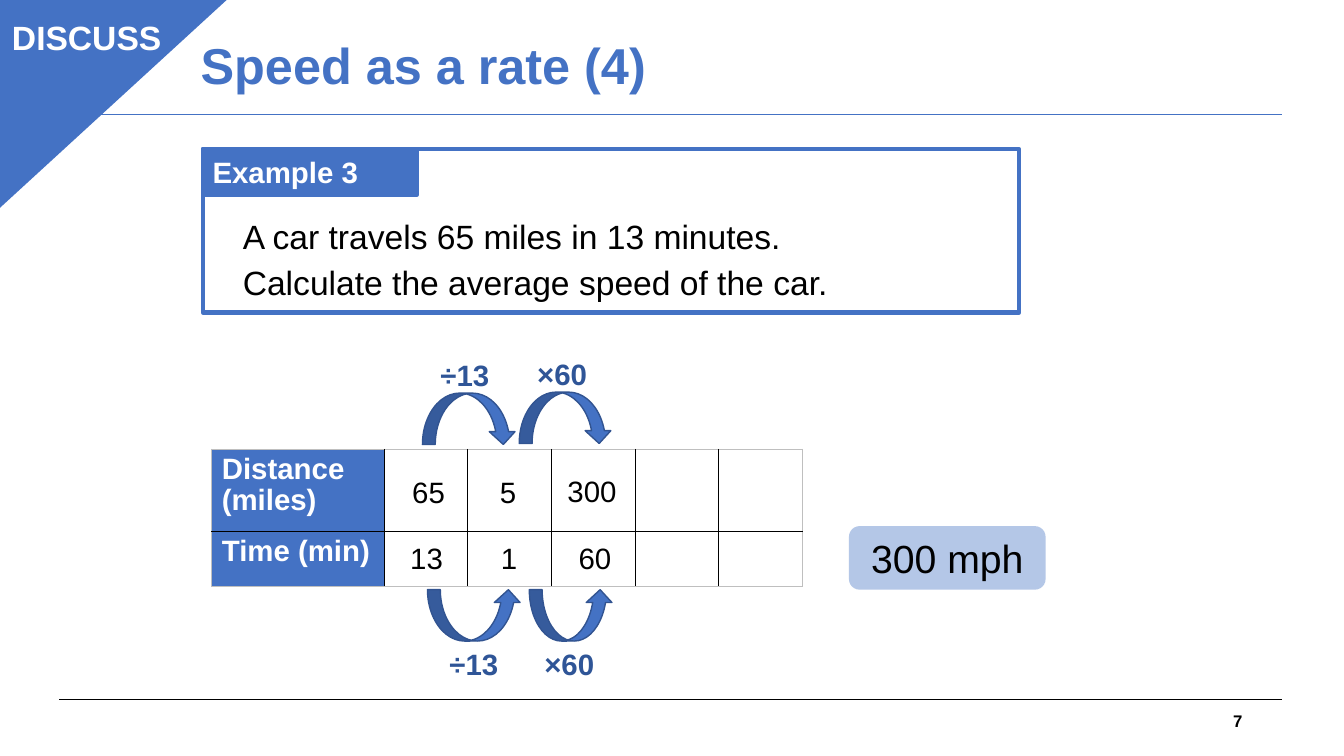
"""Builds the slide "Speed as a rate (4)" with a ratio table and scaling arrows."""
from lxml.etree import SubElement
from pptx import Presentation
from pptx.dml.color import RGBColor
from pptx.enum.shapes import MSO_CONNECTOR, MSO_SHAPE
from pptx.enum.text import MSO_ANCHOR, PP_ALIGN
from pptx.oxml.ns import qn
from pptx.util import Inches, Pt

BLUE, DARK_BLUE, OUTLINE, PALE_BLUE = "4472C4", "2F5597", "325491", "B4C7E7"
BLACK, WHITE, GREY = "000000", "FFFFFF", "BFBFBF"


def write(shape, lines, size, color, bold=False, align=PP_ALIGN.LEFT,
          anchor=MSO_ANCHOR.TOP, after=0, spacing=1.0):
    """Fill a shape or table cell with formatted paragraphs."""
    frame = shape.text_frame
    frame.word_wrap = True
    frame.vertical_anchor = anchor
    for index, line in enumerate(lines):
        paragraph = frame.add_paragraph() if index else frame.paragraphs[0]
        paragraph.alignment = align
        paragraph.space_before = Pt(0)
        paragraph.space_after = Pt(after)
        paragraph.line_spacing = spacing
        run = paragraph.add_run()
        run.text = line
        run.font.name = "Arial"
        run.font.size = Pt(size)
        run.font.bold = bold
        run.font.color.rgb = RGBColor.from_string(color)


def add_box(kind, place, fill=None, line=None, width=1, flip=False):
    """Add a preset shape with the given fill and outline."""
    shape = slide.shapes.add_shape(kind, *[Inches(value) for value in place])
    shape.shadow.inherit = False
    if fill:
        shape.fill.solid()
        shape.fill.fore_color.rgb = RGBColor.from_string(fill)
    else:
        shape.fill.background()
    if line:
        shape.line.color.rgb = RGBColor.from_string(line)
        shape.line.width = Pt(width)
    else:
        shape.line.fill.background()
    if flip:
        shape.element.spPr.get_or_add_xfrm().set("flipV", "1")
    return shape


presentation = Presentation()
presentation.slide_width = Inches(13.33)
presentation.slide_height = Inches(7.5)
slide = presentation.slides.add_slide(presentation.slide_layouts[5])

for height, color in [(6.94, BLACK), (1.14, BLUE)]:
    rule = slide.shapes.add_connector(
        MSO_CONNECTOR.STRAIGHT, Inches(0.59), Inches(height), Inches(12.72), Inches(height))
    rule.line.color.rgb = RGBColor.from_string(color)
    rule.line.width = Pt(0.75)
    SubElement(rule.element.spPr, qn("a:effectLst"))

title = slide.shapes.title
title.left, title.top = Inches(1.89), Inches(0.12)
title.width, title.height = Inches(8.61), Inches(1.11)
write(title, ["Speed as a rate (4)"], 36, BLUE, True, anchor=MSO_ANCHOR.MIDDLE, spacing=0.9)

corner = add_box(MSO_SHAPE.ISOSCELES_TRIANGLE, (-0.03, -0.02, 2.29, 2.1), BLUE, BLUE, flip=True)
corner.adjustments[0] = 0
example_tab = add_box(MSO_SHAPE.RECTANGLE, (2.01, 1.48, 2.13, 0.45), BLUE, BLUE, 3)
write(example_tab, ["Example 3"], 21, WHITE, True)
add_box(MSO_SHAPE.RECTANGLE, (2.01, 1.48, 8.1, 1.62), line=BLUE, width=3)

table = slide.shapes.add_table(2, 6, Inches(2.1), Inches(4.46), Inches(5.86), Inches(1.36)).table
for index, column in enumerate(table.columns):
    column.width = Inches(0.83 if index else 1.71)
table.rows[0].height = Inches(0.81)
table.rows[1].height = Inches(0.55)
for row in range(2):
    for column in range(6):
        cell = table.cell(row, column)
        properties = cell._tc.get_or_add_tcPr()
        inner_sides = {"lnL": column > 0, "lnR": column < 5, "lnT": row > 0, "lnB": row < 1}
        for side, inner in inner_sides.items():
            border = SubElement(properties, qn("a:" + side), w=str(Pt(1)))
            border_fill = SubElement(border, qn("a:solidFill"))
            SubElement(border_fill, qn("a:srgbClr"), val=BLACK if inner else GREY)
        if column:
            cell.fill.background()
        else:
            cell.fill.solid()
            cell.fill.fore_color.rgb = RGBColor.from_string(BLUE)
for row, heading in enumerate(["Distance (miles)", "Time (min)"]):
    write(table.cell(row, 0), [heading], 21, WHITE, True, spacing=0.95)

arrows = [
    ((4.24, 5.85, 0.93, 0.51), False),
    ((4.19, 3.9, 0.93, 0.51), True),
    ((5.25, 5.85, 0.83, 0.51), False),
    ((5.15, 3.89, 0.92, 0.51), True),
]
for place, flip in arrows:
    add_box(MSO_SHAPE.CURVED_UP_ARROW, place, BLUE, OUTLINE, flip=flip)

question = ["A car travels 65 miles in 13 minutes.", "Calculate the average speed of the car."]
number = {"size": 21, "color": BLACK, "after": 4.5}
factor = {"size": 21, "color": DARK_BLUE, "bold": True, "after": 4.5}
texts = [
    ((-0.01, 0.12, 1.74, 0.5), ["DISCUSS"],
     {"size": 24, "color": WHITE, "bold": True, "align": PP_ALIGN.CENTER}),
    ((2.31, 2.09, 7.8, 0.98), question, {"size": 24, "color": BLACK, "after": 4.5}),
    ((3.99, 4.65, 0.8, 0.45), ["65"], number),
    ((4.86, 4.65, 0.8, 0.45), ["5"], number),
    ((5.53, 4.64, 0.8, 0.45), ["300"], number),
    ((3.97, 5.31, 0.8, 0.45), ["13"], number),
    ((4.87, 5.31, 0.8, 0.45), ["1"], number),
    ((5.64, 5.31, 0.8, 0.45), ["60"], number),
    ((4.36, 6.36, 0.73, 0.45), ["÷13"], factor),
    ((4.27, 3.49, 0.83, 0.45), ["÷13"], factor),
    ((5.3, 6.36, 0.79, 0.45), ["×60"], factor),
    ((5.23, 3.48, 0.83, 0.45), ["×60"], factor),
    ((9.42, 6.95, 3, 0.4), ["7"],
     {"size": 12, "color": BLACK, "bold": True, "align": PP_ALIGN.RIGHT,
      "anchor": MSO_ANCHOR.MIDDLE}),
]
for place, lines, style in texts:
    text_box = slide.shapes.add_textbox(*[Inches(value) for value in place])
    write(text_box, lines, **style)

answer = add_box(MSO_SHAPE.ROUNDED_RECTANGLE, (8.42, 5.22, 1.95, 0.63), PALE_BLUE)
write(answer, ["300 mph"], 28, BLACK, align=PP_ALIGN.CENTER, anchor=MSO_ANCHOR.MIDDLE)

presentation.save("out.pptx")
